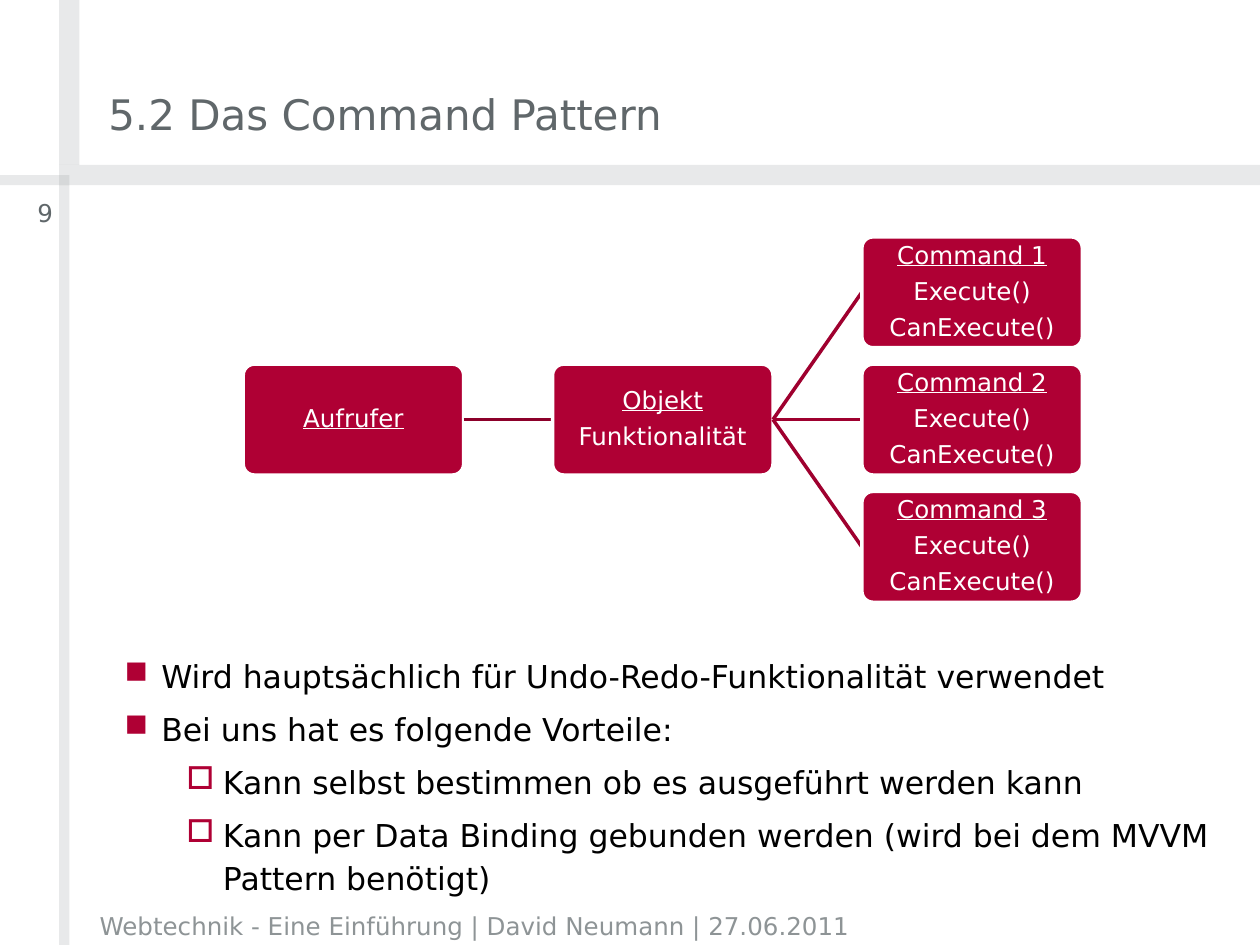
"""Build a slide on the Command pattern with a box diagram and bullet points."""
from lxml.etree import SubElement
from pptx import Presentation
from pptx.dml.color import RGBColor
from pptx.enum.shapes import MSO_CONNECTOR, MSO_SHAPE
from pptx.enum.text import MSO_ANCHOR, PP_ALIGN
from pptx.oxml.ns import qn
from pptx.util import Inches, Pt

COLORS = {"red": "AF0034", "dark_red": "8C002A", "mid_red": "9F002F", "white": "FFFFFF",
          "black": "000000", "title": "60676A", "gray": "8E9496"}
LEFT, TOP, COLUMN, ROW = 1.93, 1.88, 2.455, 1.01
BOX_WIDTH, BOX_HEIGHT = 1.75, 0.88


def color(name):
    return RGBColor.from_string(COLORS[name])


def write(shape, lines, size, color_name, anchor=MSO_ANCHOR.TOP, **paragraph_format):
    frame = shape.text_frame
    for name, value in {"word_wrap": True, "vertical_anchor": anchor, "margin_left": 0,
                        "margin_right": 0, "margin_top": 0, "margin_bottom": 0}.items():
        setattr(frame, name, value)
    for index, line in enumerate(lines):
        paragraph = frame.paragraphs[0] if index == 0 else frame.add_paragraph()
        run = paragraph.add_run()
        run.text = line
        run.font.color.rgb = color(color_name)
        for name, value in {"size": Pt(size), "name": "DejaVu Sans"}.items():
            setattr(run.font, name, value)
        for name, value in paragraph_format.items():
            setattr(paragraph, name, value)
    return frame.paragraphs


presentation = Presentation()
presentation.slide_width, presentation.slide_height = Inches(10), Inches(7.5)
slide = presentation.slides.add_slide(presentation.slide_layouts[6])
shapes = slide.shapes

for bar in ((0.47, 0, 0.16, 1.31), (0.47, 1.31, 9.53, 0.16),
            (0.47, 1.47, 0.08, 6.03), (0, 1.39, 0.55, 0.08)):
    shape = shapes.add_shape(MSO_SHAPE.RECTANGLE, *map(Inches, bar))
    shape.shadow.inherit = False
    shape.fill.solid()
    shape.fill.fore_color.rgb = color("gray")
    shape.line.fill.background()
    fill_color = shape._element.spPr.find(qn("a:solidFill"))[0]
    SubElement(fill_color, qn("a:alpha"), val="20000")

for area, text, size, color_name, anchor, alignment in (
        ((0.86, 0, 6.83, 1.1), "5.2 Das Command Pattern", 24, "title",
         MSO_ANCHOR.BOTTOM, PP_ALIGN.LEFT),
        ((0.79, 7.18, 8.94, 0.28), "Webtechnik - Eine Einführung | David Neumann | 27.06.2011",
         14, "gray", MSO_ANCHOR.BOTTOM, PP_ALIGN.LEFT),
        ((0, 1.57, 0.42, 0.36), "9", 14, "title", MSO_ANCHOR.TOP, PP_ALIGN.RIGHT)):
    write(shapes.add_textbox(*map(Inches, area)), [text], size, color_name, anchor,
          alignment=alignment)

bullets = (
    (0, "Wird hauptsächlich für Undo-Redo-Funktionalität verwendet"),
    (0, "Bei uns hat es folgende Vorteile:"),
    (1, "Kann selbst bestimmen ob es ausgeführt werden kann"),
    (1, "Kann per Data Binding gebunden werden (wird bei dem MVVM Pattern benötigt)"),
)
body = shapes.add_textbox(*map(Inches, (0.79, 5.17, 8.94, 1.97)))
paragraphs = write(body, [text for level, text in bullets], 18, "black", line_spacing=1.15)
for index, (paragraph, (level, text)) in enumerate(zip(paragraphs, bullets)):
    paragraph.level = level
    paragraph.space_before = Pt(5.4 if index else 0)
    properties = paragraph._p.get_or_add_pPr()
    properties.set("marL", str(Inches(0.49 * (level + 1))))
    properties.set("indent", str(Inches(-0.29)))
    bullet_color = SubElement(properties, qn("a:buClr"))
    SubElement(bullet_color, qn("a:srgbClr"), val=COLORS["red"])
    SubElement(properties, qn("a:buFont"), typeface="OpenSymbol")
    SubElement(properties, qn("a:buChar"), char="■□"[level])

commands = [(2, row, [f"Command {row + 1}", "Execute()", "CanExecute()"], "Objekt", "mid_red")
            for row in range(3)]
boxes = {}
for column, row, lines, source, line_color in [
        (0, 1, ["Aufrufer"], None, None),
        (1, 1, ["Objekt", "Funktionalität"], "Aufrufer", "dark_red"), *commands]:
    left, top = LEFT + column * COLUMN, TOP + row * ROW
    if source:
        connector = shapes.add_connector(MSO_CONNECTOR.STRAIGHT, 0, 0, 0, 0)
        connector.line.color.rgb = color(line_color)
        connector.line.width = Pt(2)
        SubElement(connector._element.spPr, qn("a:effectLst"))
        connector.begin_connect(boxes[source], 3)
    box = shapes.add_shape(MSO_SHAPE.ROUNDED_RECTANGLE,
                           *map(Inches, (left, top, BOX_WIDTH, BOX_HEIGHT)))
    boxes[lines[0]] = box
    box.adjustments[0] = 0.1
    box.shadow.inherit = False
    box.fill.solid()
    box.fill.fore_color.rgb = color("red")
    box.line.color.rgb = color("white")
    box.line.width = Pt(2)
    paragraphs = write(box, lines, 14, "white", MSO_ANCHOR.MIDDLE, alignment=PP_ALIGN.CENTER,
                       line_spacing=0.9, space_after=Pt(5.5))
    paragraphs[0].runs[0].font.underline = True
    if source:
        connector.end_connect(box, 1)

presentation.save("out.pptx")
